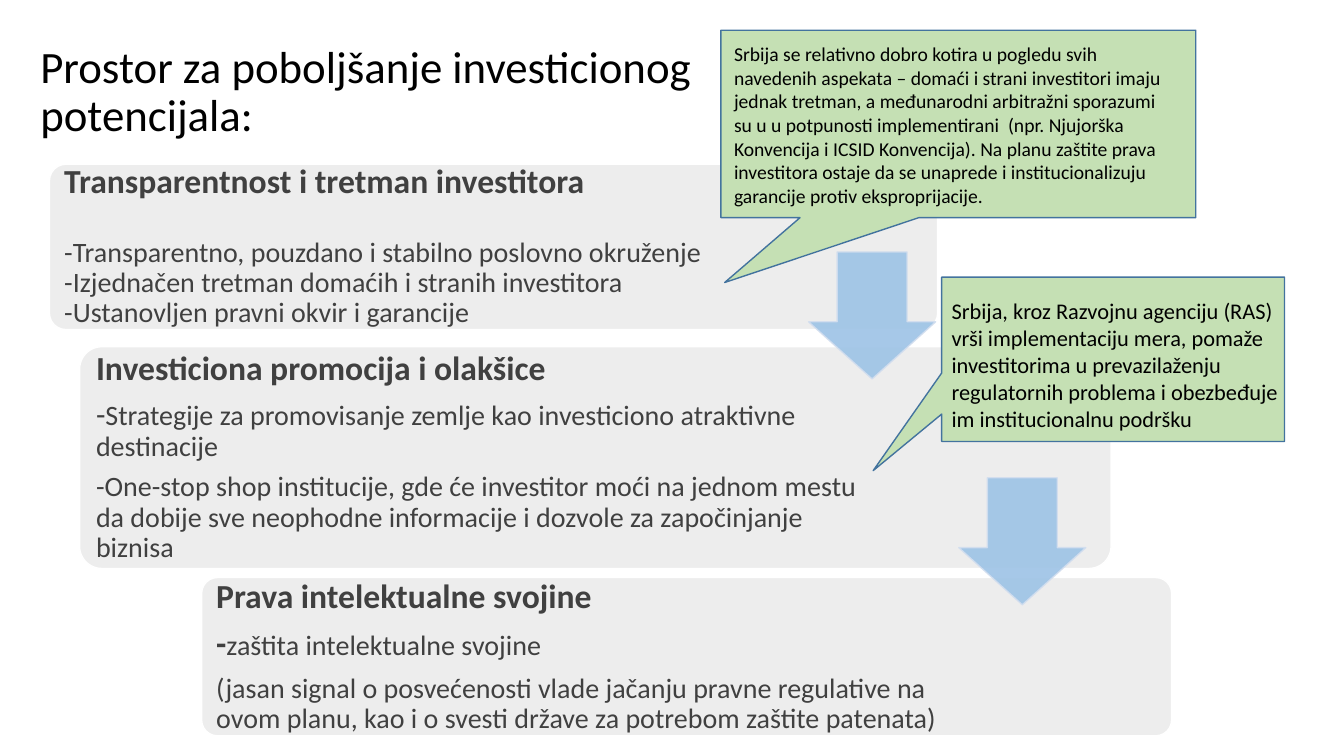
from pptx import Presentation
from pptx.dml.color import RGBColor
from pptx.enum.shapes import MSO_SHAPE
from pptx.enum.text import MSO_ANCHOR, PP_ALIGN
from pptx.oxml.ns import qn
from pptx.util import Inches, Pt
from lxml import etree

TOP, MIDDLE = MSO_ANCHOR.TOP, MSO_ANCHOR.MIDDLE
LEFT = PP_ALIGN.LEFT
ROUND_RECT = MSO_SHAPE.ROUNDED_RECTANGLE
DOWN_ARROW = MSO_SHAPE.DOWN_ARROW
CALLOUT = MSO_SHAPE.RECTANGULAR_CALLOUT

FONT = "Calibri"
COLORS = {
    "black": "000000", "text": "404040", "card": "EDEDED", "card_line": "FFFFFF",
    "arrow": "9DC3E6", "arrow_line": "D2DEEF", "note": "C5E0B4", "note_line": "43739E",
}

CARDS = [
    ((0.49, 1.63, 8.81, 1.64), 6.91, [
        ([("Transparentnost i tretman investitora", 24, True)], 26.4),
        ([("-Transparentno, pouzdano i stabilno poslovno okruženje", 20, False)], 0),
        ([("-Izjednačen tretman domaćih i stranih investitora", 20, False)], 0),
        ([("-Ustanovljen pravni okvir i garancije", 20, False)], 0),
    ]),
    ((0.79, 3.44, 10.23, 2.2), 7.86, [
        ([("Investiciona promocija i olakšice", 24, True)], 8),
        ([("-", 22, False),
          ("Strategije za promovisanje zemlje kao investiciono atraktivne destinacije", 20, False)], 7),
        ([("-One-stop shop institucije, gde će investitor moći na jednom mestu da dobije "
           "sve neophodne informacije i dozvole za započinjanje biznisa", 20, False)], 0),
    ]),
    ((2, 5.73, 9.62, 1.57), 7.42, [
        ([("Prava intelektualne svojine", 24, True)], 8),
        ([("-", 24, True), ("zaštita intelektualne svojine", 20, False)], 8),
        ([("(jasan signal o posvećenosti vlade jačanju pravne regulative na ovom planu, "
           "kao i o svesti države za potrebom zaštite patenata)", 20, False)], 0),
    ]),
]

ARROWS = [(8.02, 2.5, 1.26, 1.26), (9.51, 4.74, 1.26, 1.26)]

NOTES = [
    ((7.15, 0.3, 4.71, 1.86), (-0.492, 0.846), (0.13, 0.12, 0.22, 0), 14,
     "Srbija se relativno dobro kotira u pogledu svih navedenih aspekata – domaći i strani "
     "investitori imaju jednak tretman, a međunarodni arbitražni sporazumi su u u potpunosti "
     "implementirani  (npr. Njujorška Konvencija i ICSID Konvencija). Na planu zaštite prava "
     "investitora ostaje da se unaprede i institucionalizuju garancije protiv eksproprijacije."),
    ((9.34, 2.75, 3.4, 1.63), (-0.7, 0.678), (0.1, 0.2, 0, 0), 16,
     "Srbija, kroz Razvojnu agenciju (RAS) vrši implementaciju mera, pomaže investitorima u "
     "prevazilaženju regulatornih problema i obezbeđuje im institucionalnu podršku"),
]


def rgb(name):
    return RGBColor.from_string(COLORS[name])


def add_run(p, text, size, color, bold=False):
    r = p.add_run()
    r.text = text
    r.font.name = FONT
    r.font.size = Pt(size)
    r.font.bold = bold
    r.font.color.rgb = rgb(color)


def setup_text(tf, anchor, margins):
    tf.word_wrap = True
    tf.vertical_anchor = anchor
    tf.margin_left, tf.margin_top, tf.margin_right, tf.margin_bottom = map(Inches, margins)


def add_panel(slide, kind, box, adjustments, fill, line):
    sp = slide.shapes.add_shape(kind, *map(Inches, box))
    for i, value in enumerate(adjustments):
        sp.adjustments[i] = value
    sp.shadow.inherit = False
    sp.fill.solid()
    sp.fill.fore_color.rgb = rgb(fill)
    sp.line.color.rgb = rgb(line)
    sp.line.width = Pt(1)
    return sp


def add_title(slide, box, text):
    title = slide.shapes.title
    title.left, title.top, title.width, title.height = map(Inches, box)
    tf = title.text_frame
    setup_text(tf, TOP, (0.1, 0.05, 0.1, 0.05))
    p = tf.paragraphs[0]
    p.alignment = LEFT
    p.line_spacing = 0.9
    add_run(p, text, 32, "black")


def add_card(slide, box, text_width, paragraphs):
    sp = add_panel(slide, ROUND_RECT, box, [0.1], "card", "card_line")
    tf = sp.text_frame
    setup_text(tf, MIDDLE, (0.1, 0, box[2] - text_width, 0))
    for i, (runs, gap) in enumerate(paragraphs):
        p = tf.add_paragraph() if i else tf.paragraphs[0]
        p.alignment = LEFT
        p.line_spacing = 0.9
        p.space_after = Pt(gap)
        for text, size, bold in runs:
            add_run(p, text, size, "text", bold)


def add_arrow(slide, box):
    sp = add_panel(slide, DOWN_ARROW, box, [0.55, 0.45], "arrow", "arrow_line")
    for color in sp._element.spPr.iter(qn("a:srgbClr")):
        etree.SubElement(color, qn("a:alpha")).set("val", "90000")


def add_note(slide, box, tip, margins, size, text):
    sp = add_panel(slide, CALLOUT, box, tip, "note", "note_line")
    tf = sp.text_frame
    setup_text(tf, TOP, margins)
    p = tf.paragraphs[0]
    p.alignment = LEFT
    add_run(p, text, size, "black")


def main():
    prs = Presentation()
    prs.slide_width, prs.slide_height = Inches(13.33), Inches(7.5)
    slide = prs.slides.add_slide(prs.slide_layouts[5])
    add_title(slide, (0.3, 0.39, 7.58, 1.1), "Prostor za poboljšanje investicionog potencijala:")
    for card in CARDS:
        add_card(slide, *card)
    for box in ARROWS:
        add_arrow(slide, box)
    for note in NOTES:
        add_note(slide, *note)
    prs.save("out.pptx")


if __name__ == "__main__":
    main()
